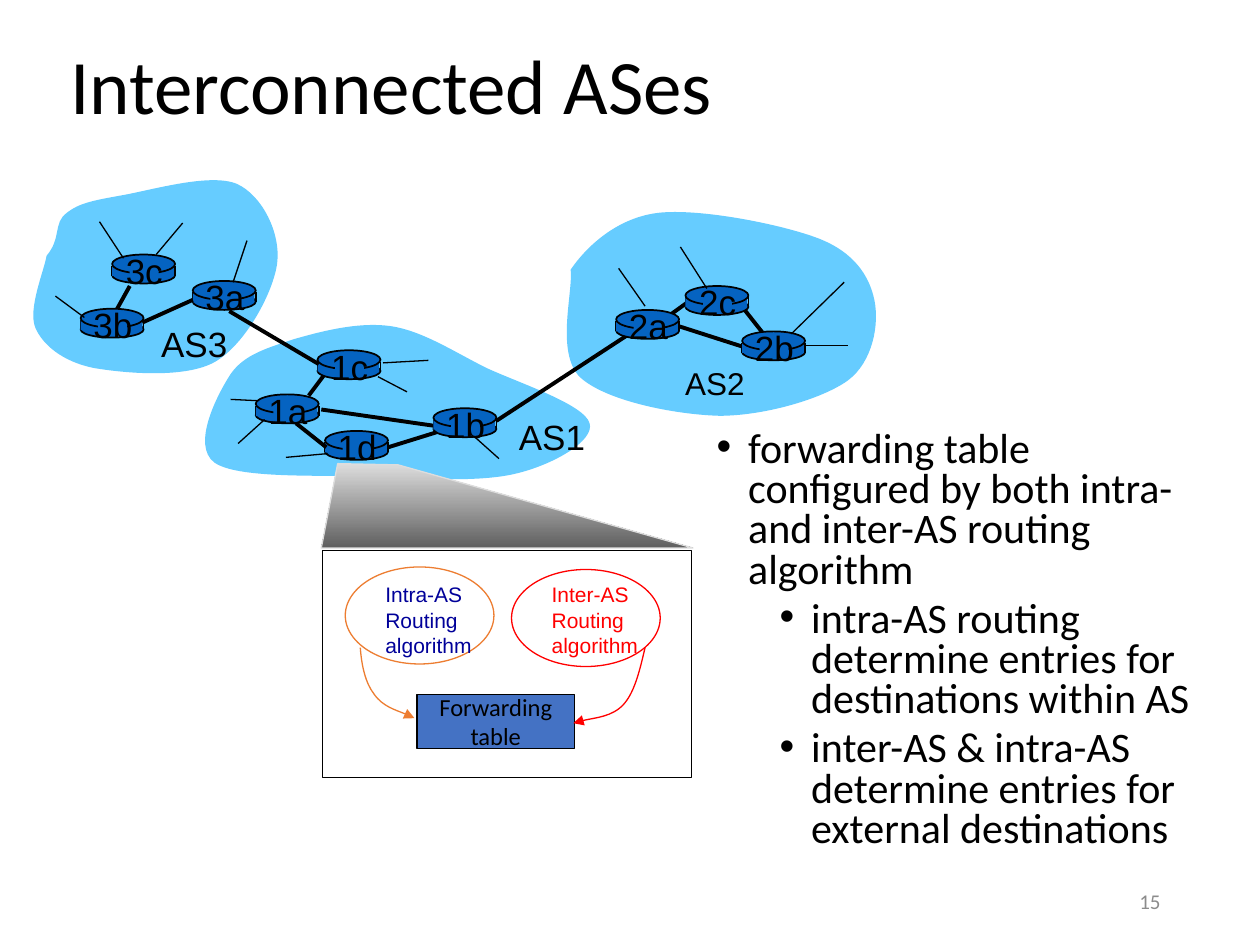
from dataclasses import dataclass
from typing import NamedTuple, Optional

from lxml.etree import SubElement
from pptx import Presentation
from pptx.dml.color import RGBColor
from pptx.enum.shapes import MSO_CONNECTOR, MSO_SHAPE
from pptx.enum.text import MSO_ANCHOR, MSO_AUTO_SIZE, PP_ALIGN
from pptx.oxml.ns import qn
from pptx.util import Inches, Pt


@dataclass(frozen=True)
class Theme:
    black: str = "000000"
    cloud: str = "66CCFF"
    router: str = "0563C1"
    table: str = "4472C4"
    orange: str = "ED7D31"
    red: str = "FF0000"
    navy: str = "000099"
    grey: str = "8C8C8C"
    light: str = "DDDDDD"
    dark: str = "5F5F5F"
    sans: str = "Arial"
    body: str = "Calibri"
    title_size: float = 44
    body_size: float = 24
    label_size: float = 20
    small_label_size: float = 18
    table_size: float = 14
    note_size: float = 12
    thin: float = 0.75
    outline: float = 1
    thick: float = 2.25


class Router(NamedTuple):
    name: str
    left: float
    top: float


class Label(NamedTuple):
    text: str
    box: tuple
    size: float


class Algorithm(NamedTuple):
    name: str
    left: float
    top: float
    outline: str
    color: str


class Bullet(NamedTuple):
    text: str
    level: int
    indent: float
    before: float


THEME = Theme()

CLOUDS = [
    [(4.53, 2.14), (4.66, 1.95), (4.9, 1.73), (5.22, 1.69), (5.55, 1.65), (6.2, 1.78), (6.49, 1.89),
     (6.78, 2), (6.9, 2.19), (6.94, 2.38), (6.98, 2.57), (6.93, 2.87), (6.73, 3.02),
     (6.52, 3.17), (6.06, 3.3), (5.71, 3.3), (5.35, 3.29), (4.8, 3.18), (4.6, 2.99),
     (4.41, 2.79), (4.55, 2.32), (4.53, 2.14)],
    [(0.37, 2.03), (0.49, 1.89), (0.42, 1.77), (0.53, 1.69), (0.63, 1.61), (0.75, 1.59), (0.97, 1.55),
     (1.2, 1.51), (1.67, 1.37), (1.88, 1.46), (2.08, 1.55), (2.23, 1.85), (2.2, 2.09),
     (2.17, 2.32), (1.95, 2.73), (1.71, 2.87), (1.47, 3.01), (0.97, 2.96), (0.74, 2.92),
     (0.5, 2.87), (0.34, 2.74), (0.28, 2.6), (0.22, 2.45), (0.35, 2.15), (0.37, 2.03)],
    [(1.83, 2.97), (1.94, 2.81), (2.13, 2.76), (2.34, 2.69), (2.55, 2.63), (2.85, 2.55), (3.11, 2.59),
     (3.36, 2.63), (3.6, 2.79), (3.86, 2.92), (4.12, 3.04), (4.64, 3.21), (4.68, 3.36),
     (4.72, 3.5), (4.39, 3.69), (4.09, 3.76), (3.8, 3.83), (3.31, 3.8), (2.91, 3.78),
     (2.52, 3.77), (1.88, 3.8), (1.7, 3.67), (1.52, 3.53), (1.72, 3.14), (1.83, 2.97)],
]
ROUTERS_BELOW_LINKS = [Router("3b", 0.64, 2.45), Router("1d", 2.58, 3.42),
                       Router("3a", 1.53, 2.23), Router("1c", 2.52, 2.78)]
ROUTERS_ABOVE_LINKS = [Router("2a", 4.89, 2.46), Router("1a", 2.03, 3.13), Router("2c", 5.44, 2.27),
                       Router("2b", 5.89, 2.63), Router("1b", 3.44, 3.24), Router("3c", 0.89, 2.02)]
LINKS = [(5.39, 2.59, 5.89, 2.75), (5.91, 2.46, 6.06, 2.65), (5.29, 2.52, 5.47, 2.39),
         (3.08, 3.55, 3.5, 3.42), (2.35, 3.36, 2.59, 3.55), (2.55, 3.25, 3.45, 3.38),
         (2.45, 3.14, 2.57, 2.98), (1.13, 2.56, 1.53, 2.38), (1.82, 2.47, 2.53, 2.89),
         (3.94, 3.34, 4.98, 2.66)]
LINK_3C_3B = (1.03, 2.27, 0.93, 2.45)
STUBS = [(0.44, 2.35, 0.67, 2.52), (1.45, 1.77, 1.24, 2.02), (0.79, 1.76, 0.98, 2.05),
         (1.96, 1.91, 1.85, 2.24), (6.38, 2.74, 6.73, 2.74), (6.28, 2.65, 6.7, 2.24),
         (5.61, 2.29, 5.4, 1.96), (5.12, 2.43, 4.91, 2.13), (2.1, 3.33, 1.89, 3.52),
         (2.04, 3.18, 1.83, 3.17), (2.6, 3.6, 2.27, 3.63), (3.04, 2.88, 3.4, 2.86),
         (3.77, 3.47, 3.96, 3.64), (3, 2.99, 3.23, 3.11)]
AS_LABELS = [Label("AS3", (1.18, 2.51, 0.73, 0.43), THEME.label_size),
             Label("AS1", (4.02, 3.25, 0.73, 0.43), THEME.label_size),
             Label("AS2", (5.34, 2.84, 0.67, 0.4), THEME.small_label_size)]
ALGORITHMS = [Algorithm("Intra-AS", 2.74, 4.5, THEME.orange, THEME.navy),
              Algorithm("Inter-AS", 4.06, 4.52, THEME.red, THEME.red)]
ARROWS = [
    ([(2.86, 5.14), (2.87, 5.28), (2.9, 5.42), (2.97, 5.51), (3.04, 5.61), (3.24, 5.67), (3.29, 5.7)],
     THEME.orange),
    ([(5.12, 5.14), (5.08, 5.31), (5.04, 5.49), (4.95, 5.59), (4.86, 5.69), (4.62, 5.71), (4.55, 5.74)],
     THEME.red),
]
BULLETS = [
    Bullet("forwarding table configured by both intra- and inter-AS routing algorithm", 0, 0.25, 10),
    Bullet("intra-AS routing determine entries for destinations within AS", 1, 0.75, 5),
    Bullet("inter-AS & intra-AS determine entries for external destinations", 1, 0.75, 5),
]


def paint(shape, fill: Optional[str] = None, line: Optional[str] = None, width: float = THEME.thin) -> None:
    shape.shadow.inherit = False
    if fill:
        shape.fill.solid()
        shape.fill.fore_color.rgb = RGBColor.from_string(fill)
    else:
        shape.fill.background()
    if line:
        shape.line.color.rgb = RGBColor.from_string(line)
        shape.line.width = Pt(width)
    else:
        shape.line.fill.background()


def add_preset(slide, kind, box: tuple, fill=None, line=None, width: float = THEME.thin):
    shape = slide.shapes.add_shape(kind, *map(Inches, box))
    paint(shape, fill, line, width)
    return shape


def add_line(slide, ends: tuple, width: float) -> None:
    connector = slide.shapes.add_connector(MSO_CONNECTOR.STRAIGHT, *map(Inches, ends))
    connector.line.color.rgb = RGBColor.from_string(THEME.black)
    connector.line.width = Pt(width)
    SubElement(connector.element.spPr, qn("a:effectLst"))


def add_outline(slide, points: list, close: bool):
    builder = slide.shapes.build_freeform(Inches(points[0][0]), Inches(points[0][1]))
    builder.add_line_segments([(Inches(x), Inches(y)) for x, y in points[1:]], close=close)
    return builder.convert_to_shape()


def add_curve(slide, points: list, close: bool):
    shape = add_outline(slide, points, close)
    segments = list(shape.element.iter(qn("a:lnTo")))
    for start in range(0, len(points) - 1, 3):
        curve = segments[start].makeelement(qn("a:cubicBezTo"))
        segments[start].addprevious(curve)
        for segment in segments[start:start + 3]:
            curve.append(segment[0])
            segment.getparent().remove(segment)
    return shape


def add_run(paragraph, text: str, size: float, font: str, color: str) -> None:
    run = paragraph.add_run()
    run.text = text
    run.font.size = Pt(size)
    run.font.name = font
    run.font.color.rgb = RGBColor.from_string(color)


def write_lines(frame, lines: list, size: float, font: str, color: str, align=PP_ALIGN.LEFT) -> None:
    for index, text in enumerate(lines):
        paragraph = frame.add_paragraph() if index else frame.paragraphs[0]
        paragraph.alignment = align
        add_run(paragraph, text, size, font, color)


def add_text(slide, box: tuple, lines: list, size: float, font: str = THEME.sans, color: str = THEME.black,
             align=PP_ALIGN.LEFT, wrap: bool = False, anchor=MSO_ANCHOR.TOP):
    frame = slide.shapes.add_textbox(*map(Inches, box)).text_frame
    frame.word_wrap = wrap
    frame.auto_size = MSO_AUTO_SIZE.NONE if wrap else MSO_AUTO_SIZE.SHAPE_TO_FIT_TEXT
    frame.vertical_anchor = anchor
    write_lines(frame, lines, size, font, color, align)
    return frame


def add_router(slide, router: Router) -> None:
    name, left, top = router
    rim = top + 0.09
    add_preset(slide, MSO_SHAPE.OVAL, (left, top + 0.1, 0.5, 0.13), THEME.router, THEME.black, THEME.outline)
    for side in (left, left + 0.5):
        add_line(slide, (side, rim, side, rim + 0.08), THEME.outline)
    add_preset(slide, MSO_SHAPE.RECTANGLE, (left, rim, 0.49, 0.08), THEME.router)
    add_preset(slide, MSO_SHAPE.OVAL, (left, top, 0.5, 0.15), THEME.router, THEME.black, THEME.outline)
    add_preset(slide, MSO_SHAPE.RECTANGLE, (left + 0.14, top + 0.02, 0.23, 0.19), THEME.router)
    add_text(slide, (left, rim - 0.18, 0.51, 0.43), [name], THEME.label_size, align=PP_ALIGN.CENTER)


def add_network(slide) -> None:
    for cloud in CLOUDS:
        paint(add_curve(slide, cloud, True), THEME.cloud)
    for router in ROUTERS_BELOW_LINKS:
        add_router(slide, router)
    for link in LINKS:
        add_line(slide, link, THEME.thick)
    for label in AS_LABELS:
        add_text(slide, label.box, [label.text], label.size)
    for router in ROUTERS_ABOVE_LINKS:
        add_router(slide, router)
    add_line(slide, LINK_3C_3B, THEME.thick)
    for stub in STUBS:
        add_line(slide, stub, THEME.thin)


def add_router_detail(slide) -> None:
    beam = add_outline(slide, [(2.55, 4.35), (2.68, 3.68), (3.16, 3.69), (5.5, 4.35)], True)
    paint(beam, line=THEME.light)
    beam.fill.gradient()
    beam.fill.gradient_angle = 270
    for stop, position, color in zip(beam.fill.gradient_stops, (0, 1), (THEME.light, THEME.dark)):
        stop.position = position
        stop.color.rgb = RGBColor.from_string(color)
    add_preset(slide, MSO_SHAPE.RECTANGLE, (2.56, 4.37, 2.93, 1.8), line=THEME.black)
    for name, left, top, outline, color in ALGORITHMS:
        add_preset(slide, MSO_SHAPE.OVAL, (left, top, 1.18, 0.77), line=outline)
        add_text(slide, (left + 0.22, 4.57, 0.92, 0.7), [name, "Routing", "algorithm"],
                 THEME.note_size, color=color)
    table = add_preset(slide, MSO_SHAPE.RECTANGLE, (3.31, 5.51, 1.25, 0.43), THEME.table, THEME.black)
    table.text_frame.word_wrap = False
    table.text_frame.vertical_anchor = MSO_ANCHOR.MIDDLE
    write_lines(table.text_frame, ["Forwarding", "table"], THEME.table_size, THEME.body, THEME.black,
                PP_ALIGN.CENTER)
    for points, color in ARROWS:
        arrow = add_curve(slide, points, False)
        paint(arrow, line=color)
        SubElement(arrow.element.spPr.find(qn("a:ln")), qn("a:tailEnd"), type="triangle")


def add_bullets(slide) -> None:
    frame = add_text(slide, (5.59, 3.37, 4.17, 3.72), [bullet.text for bullet in BULLETS],
                     THEME.body_size, THEME.body, wrap=True)
    for paragraph, bullet in zip(frame.paragraphs, BULLETS):
        paragraph.level = bullet.level
        paragraph.line_spacing = 0.8
        paragraph.space_before = Pt(bullet.before)
        properties = paragraph._p.get_or_add_pPr()
        properties.set("marL", str(Inches(bullet.indent)))
        properties.set("indent", str(Inches(-0.25)))
        SubElement(properties, qn("a:buFont"), typeface=THEME.sans)
        SubElement(properties, qn("a:buChar"), char="•")


def main() -> None:
    presentation = Presentation()
    presentation.slide_width, presentation.slide_height = Inches(10), Inches(7.5)
    slide = presentation.slides.add_slide(presentation.slide_layouts[6])
    add_network(slide)
    add_router_detail(slide)
    title = add_text(slide, (0.46, 0.25, 8.5, 0.92), ["Interconnected ASes"], THEME.title_size, THEME.body,
                     wrap=True, anchor=MSO_ANCHOR.MIDDLE)
    title.paragraphs[0].line_spacing = 0.9
    add_bullets(slide)
    add_text(slide, (7.06, 6.95, 2.25, 0.4), ["15"], THEME.note_size, THEME.body, THEME.grey,
             PP_ALIGN.RIGHT, True, MSO_ANCHOR.MIDDLE)
    presentation.save("out.pptx")


if __name__ == "__main__":
    main()
